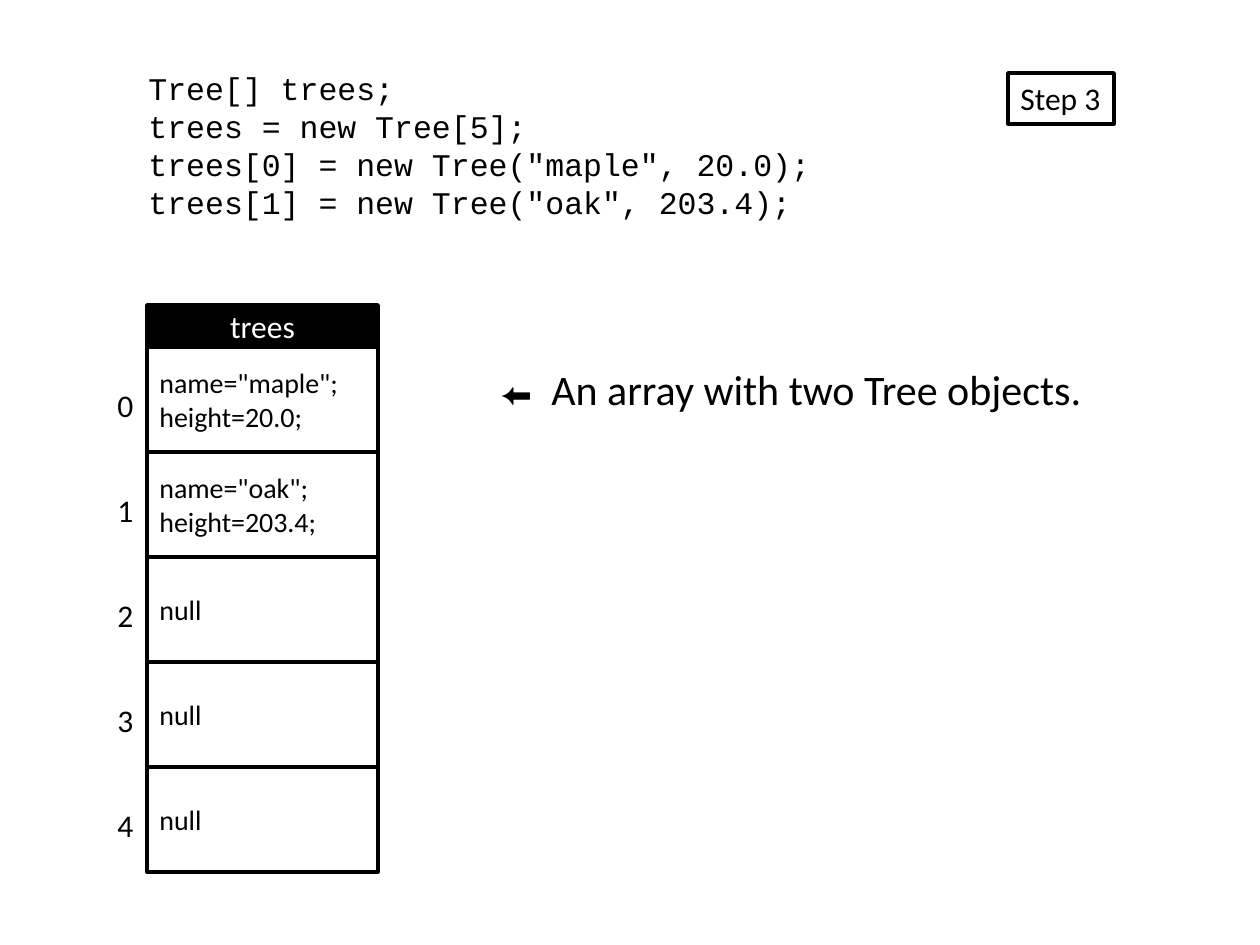
"""Build the slide that shows an array holding two Tree objects."""
from pptx import Presentation
from pptx.dml.color import RGBColor
from pptx.enum.shapes import MSO_SHAPE
from pptx.enum.text import MSO_ANCHOR, MSO_AUTO_SIZE, PP_ALIGN
from pptx.util import Emu, Pt

RECT = MSO_SHAPE.RECTANGLE
TOP, MIDDLE = MSO_ANCHOR.TOP, MSO_ANCHOR.MIDDLE
LEFT, CENTER = PP_ALIGN.LEFT, PP_ALIGN.CENTER
GROW = MSO_AUTO_SIZE.SHAPE_TO_FIT_TEXT
EMU_PER_PX = 914400 // 126
BLACK, WHITE = "000000", "FFFFFF"
BODY, MONO = "Calibri", "Courier New"

CODE = [
    "Tree[] trees;",
    "trees = new Tree[5];",
    'trees[0] = new Tree("maple", 20.0);',
    'trees[1] = new Tree("oak", 203.4);',
]
STEP = "Step 3"
ARRAY_NAME = "trees"
ELEMENTS = [
    ['name="maple";', "height=20.0;"],
    ['name="oak";', "height=203.4;"],
    ["null"],
    ["null"],
    ["null"],
]
NOTE = [("⬅", 18), ("\tAn array with two Tree objects.", 24)]

ARRAY_X, ARRAY_Y, ARRAY_W = 147, 305, 231
HEADER_H, CELL_H = 42, 105
INDEX_X, INDEX_DY, INDEX_W, INDEX_H = 105, 33, 42, 50
NOTE_INDENT = 51


def px(n):
    return Emu(n * EMU_PER_PX)


def rgb(value):
    return RGBColor.from_string(value)


def write(sp, lines, font=BODY, color=BLACK, align=LEFT, anchor=TOP, wrap=False):
    tf = sp.text_frame
    tf.word_wrap = wrap
    tf.vertical_anchor = anchor
    if not wrap:
        tf.auto_size = GROW
    for i, runs in enumerate(lines):
        p = tf.add_paragraph() if i else tf.paragraphs[0]
        p.alignment = align
        for text, size in runs:
            r = p.add_run()
            r.text = text
            r.font.name = font
            r.font.size = Pt(size)
            r.font.color.rgb = rgb(color)


def label(s, box, lines, font=BODY):
    sp = s.shapes.add_textbox(*map(px, box))
    write(sp, lines, font)
    return sp


def block(s, box, lines, fill=WHITE, **style):
    sp = s.shapes.add_shape(RECT, *map(px, box))
    sp.shadow.inherit = False
    sp.fill.solid()
    sp.fill.fore_color.rgb = rgb(fill)
    sp.line.color.rgb = rgb(BLACK)
    sp.line.width = Pt(2)
    write(sp, lines, **style)


def main():
    prs = Presentation()
    prs.slide_width, prs.slide_height = px(1260), px(945)
    s = prs.slides.add_slide(prs.slide_layouts[6])

    label(s, (136, 63, 690, 165), [[(line, 18)] for line in CODE], MONO)
    block(s, (1008, 73, 106, 51), [[(STEP, 18)]])

    block(s, (ARRAY_X, ARRAY_Y, ARRAY_W, HEADER_H), [[(ARRAY_NAME, 18)]],
          fill=BLACK, color=WHITE, align=CENTER, anchor=MIDDLE, wrap=True)
    for i, fields in enumerate(ELEMENTS):
        y = ARRAY_Y + HEADER_H + i * CELL_H
        block(s, (ARRAY_X, y, ARRAY_W, CELL_H), [[(field, 16)] for field in fields],
              anchor=MIDDLE, wrap=True)
        label(s, (INDEX_X, y + INDEX_DY, INDEX_W, INDEX_H), [[(str(i), 18)]])

    note = label(s, (488, 357, 635, 63), [NOTE])
    pPr = note.text_frame.paragraphs[0]._p.get_or_add_pPr()
    pPr.set("marL", str(px(NOTE_INDENT)))
    pPr.set("indent", str(-px(NOTE_INDENT)))

    prs.save("out.pptx")


if __name__ == "__main__":
    main()
